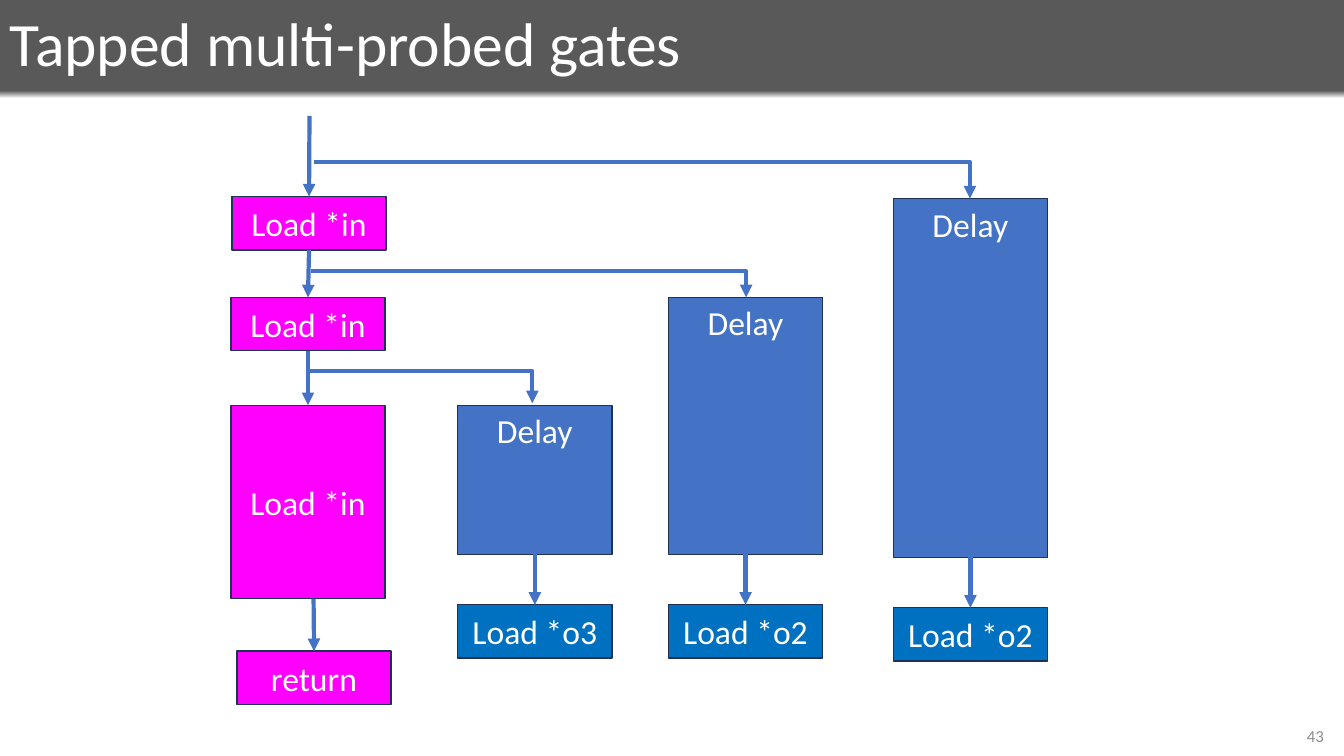
from dataclasses import dataclass
from typing import Optional

from lxml.etree import SubElement
from pptx import Presentation
from pptx.dml.color import RGBColor
from pptx.enum.shapes import MSO_CONNECTOR, MSO_SHAPE
from pptx.enum.text import MSO_ANCHOR, PP_ALIGN
from pptx.oxml import parse_xml
from pptx.oxml.ns import nsdecls, qn
from pptx.util import Inches, Pt


@dataclass(frozen=True)
class Theme:
    font: str = "Calibri"
    title_size: int = 44
    step_size: int = 24
    number_size: int = 12
    white: str = "FFFFFF"
    band: str = "595959"
    number: str = "8C8C8C"
    chain: str = "FF00FF"
    delay: str = "4472C4"
    output: str = "0070C0"
    outline: str = "1E3256"
    arrow: str = "4472C4"


THEME = Theme()
STEP_WIDTH = 1.53
LOW_STEP = 0.53


@dataclass(frozen=True)
class Step:
    label: str
    left: float
    top: float
    fill: str = THEME.chain
    height: float = LOW_STEP
    anchor: MSO_ANCHOR = MSO_ANCHOR.MIDDLE
    side_inset: float = 0.1


@dataclass(frozen=True)
class Flow:
    start: tuple[float, float]
    end: tuple[float, float]
    source: Optional[str] = None
    target: Optional[str] = None


@dataclass(frozen=True)
class Branch:
    left: float
    top: float
    right: float
    bottom: float


@dataclass(frozen=True)
class DelayColumn:
    name: str
    left: float
    top: float
    height: float
    output_top: float
    output_label: str


# Main chain of loads, from top to bottom
CHAIN = {
    "first": Step("Load *in", 2.3, 1.95),
    "second": Step("Load *in", 2.29, 2.95),
    "third": Step("Load *in", 2.29, 4.02, height=1.92),
    "return": Step("return", 2.35, 6.46),
}
CHAIN_FLOWS = [
    Flow((3.07, 1.15), (3.08, 1.97), None, "first"),
    Flow((3.07, 2.5), (3.07, 3), "first", "second"),
    Flow((3.05, 3.5), (3.05, 4), "second", "third"),
    Flow((3.11, 5.94), (3.11, 6.44), None, "return"),
]

# Each tap leads to a delay followed by its output load
DELAYS = [
    DelayColumn("o3", 4.54, 4.02, 1.48, 6, "Load *o3"),
    DelayColumn("middle o2", 6.63, 2.95, 2.55, 6, "Load *o2"),
    DelayColumn("right o2", 8.86, 1.97, 3.56, 6.03, "Load *o2"),
]
BRANCHES = [
    Branch(3.05, 3.68, 5.28, 4),
    Branch(3.08, 2.69, 7.4, 2.95),
    Branch(3.11, 1.61, 9.62, 1.97),
]


def color(value: str) -> RGBColor:
    return RGBColor.from_string(value)


def write(shape, text: str, size: int, ink: str, align: PP_ALIGN,
          anchor: MSO_ANCHOR) -> None:
    frame = shape.text_frame
    frame.word_wrap = True
    frame.vertical_anchor = anchor
    paragraph = frame.paragraphs[0]
    paragraph.text = text
    paragraph.alignment = align
    paragraph.font.name = THEME.font
    paragraph.font.size = Pt(size)
    paragraph.font.color.rgb = color(ink)


def add_text(slide, box: tuple[float, ...], text: str, size: int, ink: str,
             align: PP_ALIGN):
    label = slide.shapes.add_textbox(*map(Inches, box))
    write(label, text, size, ink, align, MSO_ANCHOR.MIDDLE)
    return label


def add_step(slide, step: Step):
    box = slide.shapes.add_shape(
        MSO_SHAPE.RECTANGLE, Inches(step.left), Inches(step.top),
        Inches(STEP_WIDTH), Inches(step.height))
    box.shadow.inherit = False
    box.fill.solid()
    box.fill.fore_color.rgb = color(step.fill)
    box.line.color.rgb = color(THEME.outline)
    box.line.width = Pt(1)
    write(box, step.label, THEME.step_size, THEME.white, PP_ALIGN.CENTER, step.anchor)
    box.text_frame.margin_left = box.text_frame.margin_right = Inches(step.side_inset)
    return box


def style_arrow(arrow) -> None:
    arrow.line.color.rgb = color(THEME.arrow)
    arrow.line.width = Pt(3)
    SubElement(arrow.line._get_or_add_ln(), qn("a:tailEnd"), type="triangle")


def add_flow(slide, flow: Flow, boxes: dict) -> None:
    arrow = slide.shapes.add_connector(
        MSO_CONNECTOR.STRAIGHT, *map(Inches, flow.start + flow.end))
    style_arrow(arrow)
    SubElement(arrow._element.spPr, qn("a:effectLst"))
    if flow.source:
        arrow.begin_connect(boxes[flow.source], 2)
    if flow.target:
        arrow.end_connect(boxes[flow.target], 0)


def add_branch(slide, branch: Branch) -> None:
    builder = slide.shapes.build_freeform(Inches(branch.left), Inches(branch.top))
    corner = (Inches(branch.right), Inches(branch.top))
    tip = (Inches(branch.right), Inches(branch.bottom))
    builder.add_line_segments([corner, tip], close=False)
    elbow = builder.convert_to_shape()
    elbow.shadow.inherit = False
    elbow.fill.background()
    style_arrow(elbow)


def paint_background(slide) -> None:
    fill = slide.background.fill
    fill.gradient()
    fill.gradient_angle = 270
    stops = [(0, THEME.band), (12, THEME.band), (13, THEME.white), (100, THEME.white)]
    stop_list = slide._element.find(".//" + qn("a:gsLst"))
    for default_stop in list(stop_list):
        stop_list.remove(default_stop)
    for percent, shade in stops:
        stop_list.append(parse_xml(
            f'<a:gs {nsdecls("a")} pos="{percent * 1000}"><a:srgbClr val="{shade}"/></a:gs>'))


def main() -> None:
    deck = Presentation()
    deck.slide_width, deck.slide_height = Inches(13.33), Inches(7.5)
    slide = deck.slides.add_slide(deck.slide_layouts[6])
    paint_background(slide)

    # Title and slide number
    title = add_text(slide, (0, 0, 13.23, 0.92), "Tapped multi-probed gates",
                     THEME.title_size, THEME.white, PP_ALIGN.LEFT)
    title.text_frame.paragraphs[0].line_spacing = 0.9
    add_text(slide, (10.23, 7.1, 3, 0.4), "43",
             THEME.number_size, THEME.number, PP_ALIGN.RIGHT)

    # Main chain
    boxes = {name: add_step(slide, step) for name, step in CHAIN.items()}
    for flow in CHAIN_FLOWS:
        add_flow(slide, flow, boxes)

    # Delay columns
    for column in DELAYS:
        delay, output = f"delay {column.name}", f"load {column.name}"
        boxes[delay] = add_step(slide, Step(
            "Delay", column.left, column.top, THEME.delay, column.height, MSO_ANCHOR.TOP))
        boxes[output] = add_step(slide, Step(
            column.output_label, column.left, column.output_top, THEME.output,
            side_inset=0.04))
        center = column.left + STEP_WIDTH / 2
        add_flow(slide, Flow((center, column.top + column.height),
                             (center, column.output_top), delay, output), boxes)

    # Taps from the chain to the delays
    for branch in BRANCHES:
        add_branch(slide, branch)

    deck.save("out.pptx")


if __name__ == "__main__":
    main()
